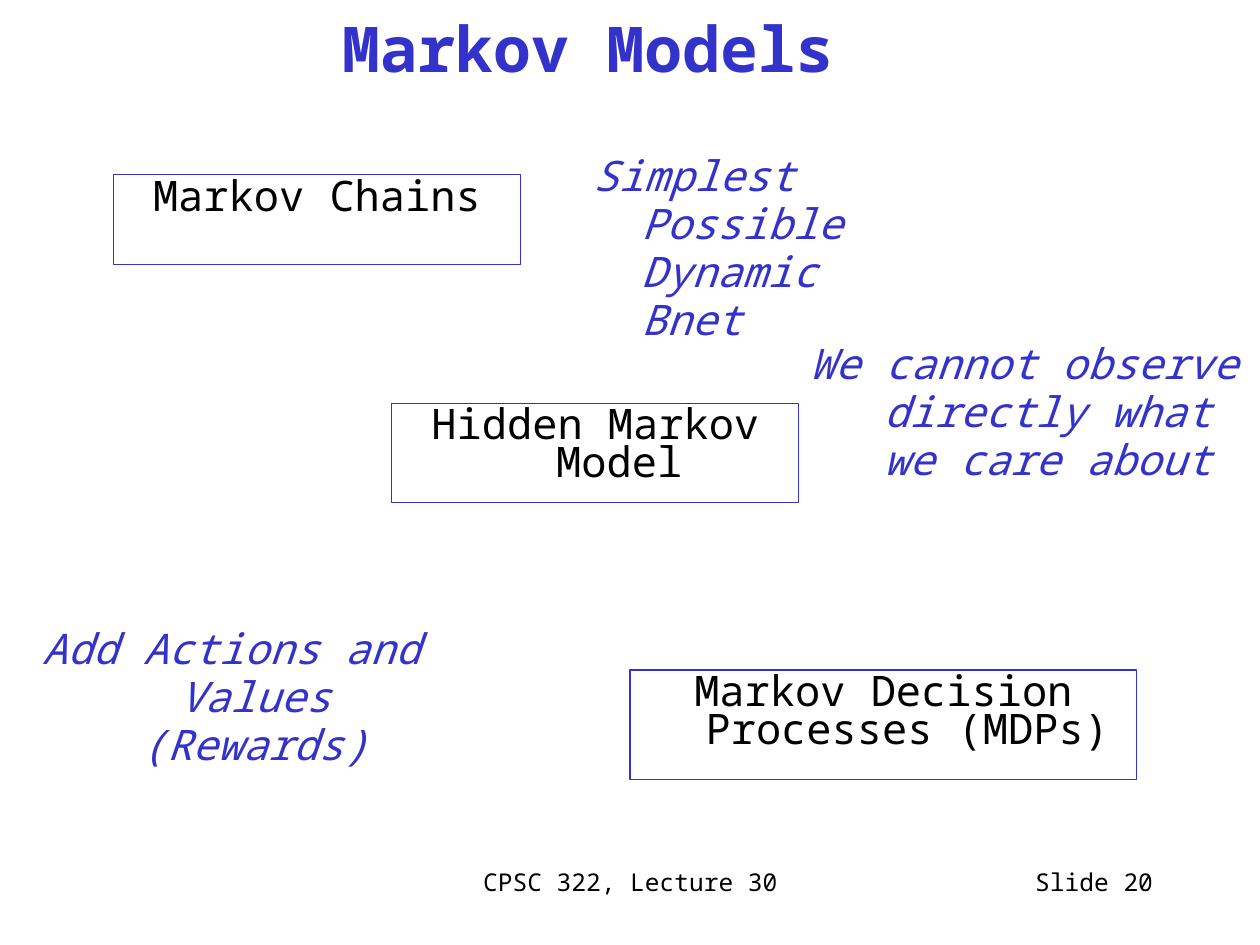
from pptx import Presentation
from pptx.dml.color import RGBColor
from pptx.enum.shapes import MSO_SHAPE
from pptx.enum.text import MSO_ANCHOR, PP_ALIGN
from pptx.util import Inches, Pt

THEME = {
    "font": "Noto Sans Mono",
    "blue": RGBColor(0x33, 0x33, 0xCC),
    "black": RGBColor(0, 0, 0),
    "title": Pt(36),
    "body": Pt(24),
    "footer": Pt(14),
}
WIDTH, HEIGHT = Inches(10), Inches(7.5)
LEFT, CENTER, RIGHT = PP_ALIGN.LEFT, PP_ALIGN.CENTER, PP_ALIGN.RIGHT

# Areas are left, top, width, height in percent of the slide's size.
TITLE = ("Markov Models", (0, 0, 93.3, 10))
FOOTERS = [
    ("CPSC 322, Lecture 30", (34.2, 91.1, 31.7, 6.7), CENTER),
    ("Slide 20", (71.7, 91.1, 20.8, 6.7), RIGHT),
]
MODELS = [  # name, area, line width in points
    ("Markov Chains", (9, 18.5, 32.3, 9.5), 0.75),
    ("Hidden Markov Model", (31.1, 42.7, 32.3, 10.5), 0.75),
    ("Markov Decision Processes (MDPs)", (50, 70.9, 40.2, 11.6), 1),
]
REMARKS = [
    ("Simplest Possible Dynamic Bnet", (46.1, 15.6, 29.7, 11.5), LEFT),
    ("We cannot observe directly what we care about", (62.5, 35.5, 37.5, 17.7), CENTER),
    ("Add Actions and Values (Rewards)", (0, 65.6, 36.7, 11.5), CENTER),
]

TITLE_FONT = {"size": THEME["title"], "bold": True}
FOOTER_FONT = {"size": THEME["footer"]}
MODEL_FONT = {"size": THEME["body"]}
REMARK_FONT = {"size": THEME["body"], "italic": True}
MODEL_SPACING = {"line_spacing": 0.75, "space_before": Pt(5)}
REMARK_SPACING = {"line_spacing": 0.95, "space_before": Pt(18)}
HANGING = Inches(0.38)


def place(area):
    return [int(share * full / 100) for share, full in zip(area, (WIDTH, HEIGHT) * 2)]


def set_format(target, values):
    for name, value in values.items():
        setattr(target, name, value)


def write(shape, text, color, font, alignment, spacing=None, hanging=0, anchor=MSO_ANCHOR.TOP):
    frame = shape.text_frame
    set_format(frame, {"word_wrap": True, "vertical_anchor": anchor})
    paragraph = frame.paragraphs[0]
    set_format(paragraph, {"alignment": alignment, **(spacing or {})})
    if hanging:
        properties = paragraph._p.get_or_add_pPr()
        properties.set("marL", str(hanging))
        properties.set("indent", str(-hanging))
    run = paragraph.add_run()
    run.text = text
    set_format(run.font, {"name": THEME["font"], **font})
    run.font.color.rgb = THEME[color]


def add_model_box(slide, area, line_width):
    box = slide.shapes.add_shape(MSO_SHAPE.RECTANGLE, *place(area))
    box.shadow.inherit = False
    box.fill.background()
    box.line.color.rgb = THEME["blue"]
    box.line.width = Pt(line_width)
    return box


def main():
    presentation = Presentation()
    set_format(presentation, {"slide_width": WIDTH, "slide_height": HEIGHT})
    slide = presentation.slides.add_slide(presentation.slide_layouts[6])

    for text, area, alignment in FOOTERS:
        write(slide.shapes.add_textbox(*place(area)), text, "black", FOOTER_FONT, alignment)

    text, area = TITLE
    write(slide.shapes.add_textbox(*place(area)), text, "blue", TITLE_FONT, CENTER,
          anchor=MSO_ANCHOR.MIDDLE)

    for text, area, line_width in MODELS:
        write(add_model_box(slide, area, line_width), text, "black", MODEL_FONT, CENTER,
              MODEL_SPACING, HANGING)

    for text, area, alignment in REMARKS:
        write(slide.shapes.add_textbox(*place(area)), text, "blue", REMARK_FONT, alignment,
              REMARK_SPACING, HANGING)

    presentation.save("out.pptx")


if __name__ == "__main__":
    main()
